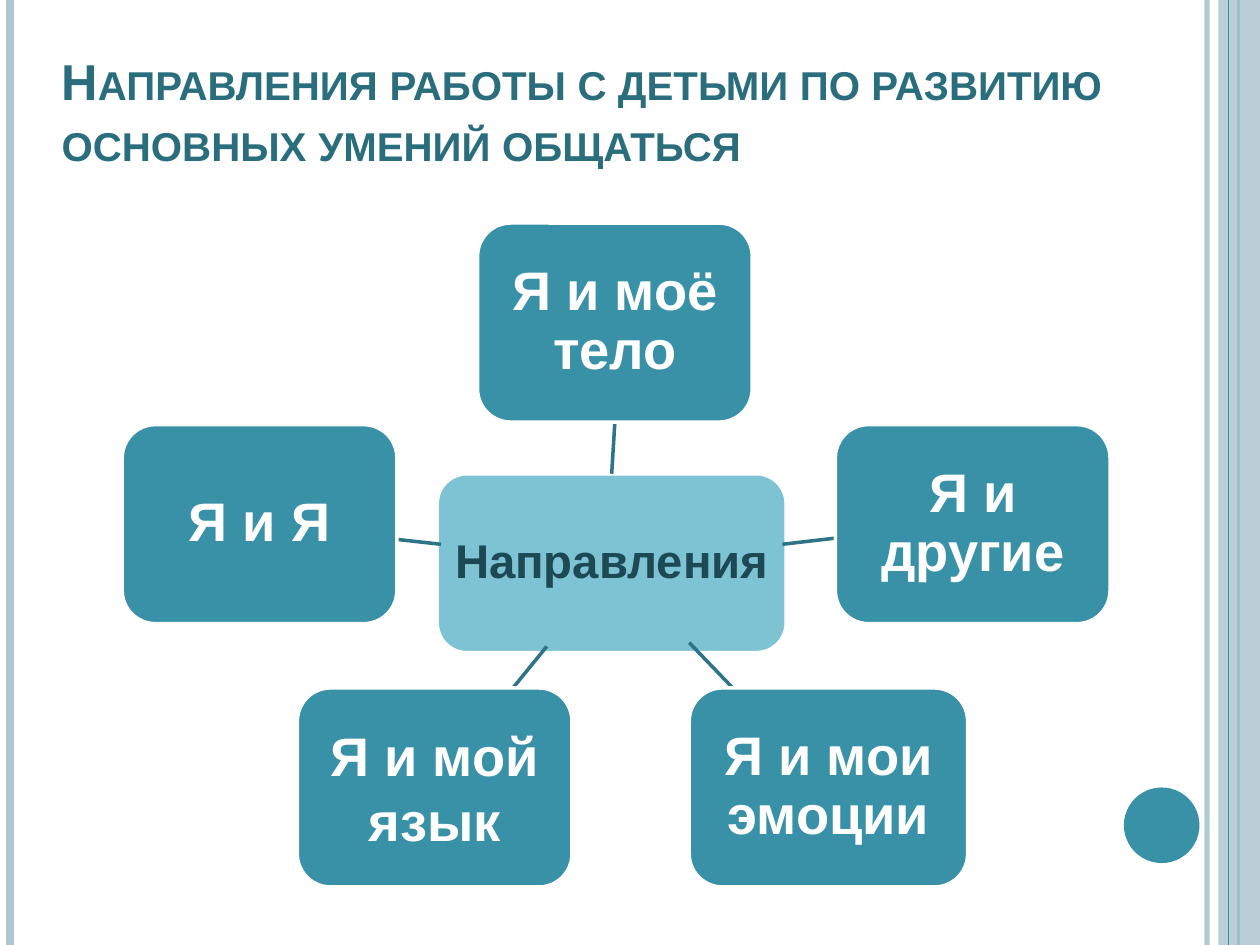
"""Build a slide with a central topic and five linked directions."""
from dataclasses import dataclass

from lxml.etree import SubElement as Sub
from pptx import Presentation
from pptx.dml.color import RGBColor as RGB
from pptx.enum.shapes import MSO_CONNECTOR as Conn, MSO_SHAPE as Kind
from pptx.enum.text import MSO_ANCHOR as Anchor, PP_ALIGN as Align
from pptx.oxml.ns import qn
from pptx.util import Inches, Pt


@dataclass(frozen=True)
class Theme:
    """Colours, font and type sizes."""
    font: str = "Arial"
    teal: str = "3891A7"
    pale: str = "AFC7D0"
    sky: str = "7EC3D4"
    link: str = "2D7486"
    head: str = "2A6D7D"
    ink: str = "1C4954"
    white: str = "FFFFFF"
    title: float = 28.8
    hub: float = 27
    node: float = 31


THEME = Theme()
TITLE = "Направления работы с детьми по развитию основных умений общаться"
HUB = (3.47, 3.76, 2.77, 1.42)
WIDE, HIGH = 2.18, 1.58
TOP = ("Я и моё тело", 3.79, 1.77, WIDE, 0.9)
NODES = [
    ("Я и другие", 6.63, 3.37, WIDE, 0.9, (6.21, 4.32, 6.64, 4.27)),
    ("Я и мои эмоции", 5.47, 5.46, 2.21, 0.9, (5.47, 5.1, 5.95, 5.6)),
    ("Я и мой язык", 2.36, 5.46, WIDE, 1.0, (4.34, 5.13, 3.99, 5.56)),
    ("Я и Я", 0.97, 3.37, WIDE, 0.9, (3.5, 4.32, 3.14, 4.28)),
]
RULES = [
    (9.58, THEME.pale, 3, 93),
    (0.08, THEME.pale, 4.5, 100),
    (9.83, THEME.teal, 1.5, 100),
]


def fade(fill, alpha):
    """Set the opacity of a solid fill element in percent."""
    if alpha < 100:
        tint = fill.find(".//" + qn("a:srgbClr"))
        Sub(tint, qn("a:alpha")).set("val", str(alpha * 1000))


def add_line(slide, ends, color, width, alpha=100):
    """Add a straight line without a shadow."""
    line = slide.shapes.add_connector(Conn.STRAIGHT, *map(Inches, ends))
    line.line.color.rgb = RGB.from_string(color)
    line.line.width = Pt(width)
    props = line._element.spPr
    fade(props.find(qn("a:ln")), alpha)
    Sub(props, qn("a:effectLst"))
    return line


def add_form(slide, kind, area, color, alpha=100, edge=None):
    """Add a flat filled shape."""
    form = slide.shapes.add_shape(kind, *map(Inches, area))
    form.shadow.inherit = False
    form.fill.solid()
    form.fill.fore_color.rgb = RGB.from_string(color)
    fade(form._element.spPr.find(qn("a:solidFill")), alpha)
    if edge:
        form.line.color.rgb = RGB.from_string(edge)
        form.line.width = Pt(2)
    else:
        form.line.fill.background()
    return form


def add_run(para, text, size, color):
    """Add a bold run and return it."""
    run = para.add_run()
    run.text = text
    font = run.font
    font.name, font.size, font.bold = THEME.font, Pt(size), True
    font.color.rgb = RGB.from_string(color)
    return run


def add_title(slide):
    """Add the title in small capitals."""
    box = slide.shapes.add_textbox(*map(Inches, (0.39, 0.3, 8.83, 1.11)))
    frame = box.text_frame
    frame.word_wrap = True
    frame.vertical_anchor = Anchor.BOTTOM
    run = add_run(frame.paragraphs[0], TITLE, THEME.title, THEME.head)
    run._r.get_or_add_rPr().set("cap", "small")


def add_card(slide, text, area, fill, size, color, gap):
    """Add a rounded card with centred text."""
    card = add_form(slide, Kind.ROUNDED_RECTANGLE, area, fill, edge=THEME.white)
    frame = card.text_frame
    frame.word_wrap = True
    frame.vertical_anchor = Anchor.MIDDLE
    frame.margin_left = frame.margin_right = Inches(0.02)
    frame.margin_top = frame.margin_bottom = Inches(0.02)
    para = frame.paragraphs[0]
    para.alignment = Align.CENTER
    para.line_spacing = gap
    add_run(para, text, size, color)
    return card


def add_node(slide, text, left, top, width, gap):
    """Add one direction card."""
    area = (left, top, width, HIGH)
    return add_card(slide, text, area, THEME.teal, THEME.node, THEME.white, gap)


def add_frame(slide):
    """Add the side rules, the band and the dot."""
    for x, color, width, alpha in RULES:
        add_line(slide, (x, 0, x, 7.5), color, width, alpha)
    add_form(slide, Kind.RECTANGLE, (9.67, 0, 0.33, 7.5), THEME.pale, 87)
    add_line(slide, (9.75, 0, 9.75, 7.5), THEME.teal, 0.75)
    add_form(slide, Kind.OVAL, (8.92, 6.25, 0.6, 0.6), THEME.teal)


def add_web(slide):
    """Add the hub, its links and the direction cards."""
    hub = add_card(slide, "Направления", HUB, THEME.sky, THEME.hub, THEME.ink, 0.9)
    link = add_line(slide, (4.87, 3.76, 4.87, 3.35), THEME.link, 2)
    peak = add_node(slide, *TOP)
    link.begin_connect(hub, 0)
    link.end_connect(peak, 2)
    for *node, ends in NODES:
        add_line(slide, ends, THEME.link, 2)
        add_node(slide, *node)


def main():
    """Build and save the deck."""
    deck = Presentation()
    deck.slide_width, deck.slide_height = Inches(10), Inches(7.5)
    slide = deck.slides.add_slide(deck.slide_layouts[6])
    add_frame(slide)
    add_title(slide)
    add_web(slide)
    deck.save("out.pptx")


if __name__ == "__main__":
    main()
